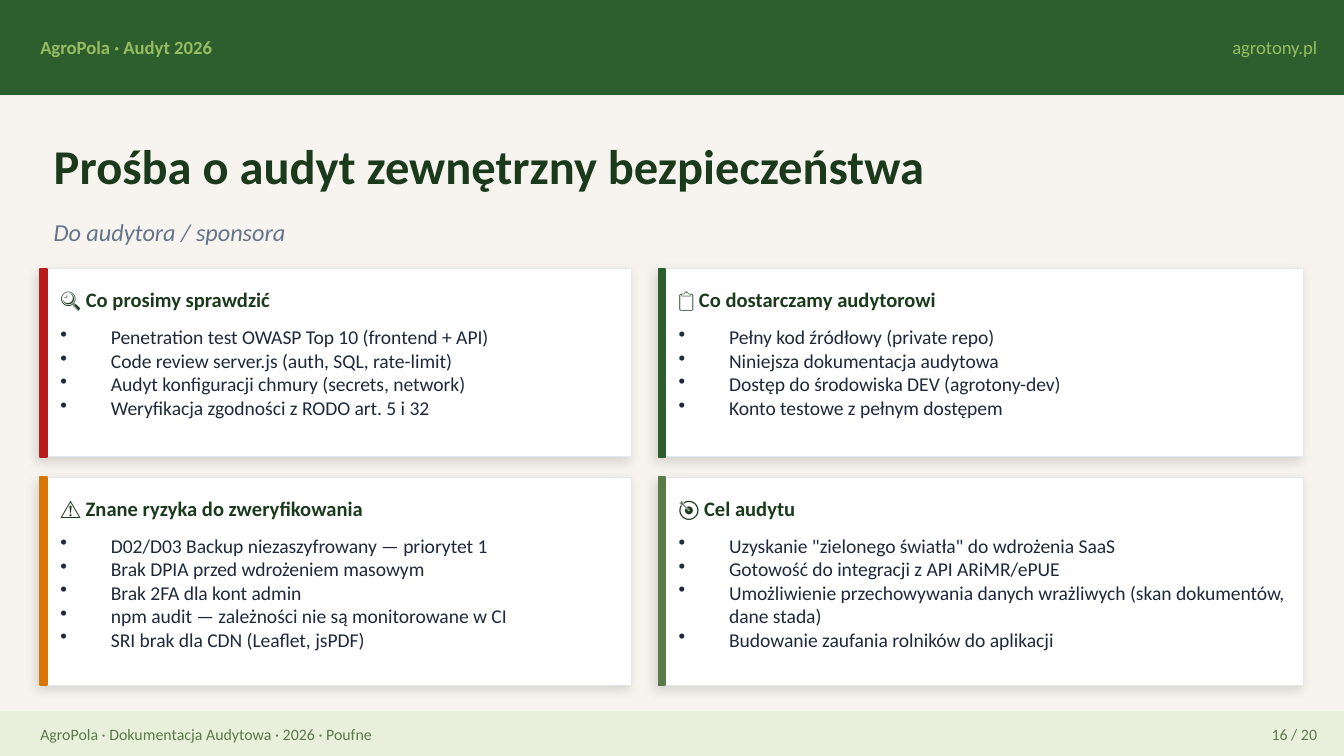
from lxml import etree
from pptx import Presentation
from pptx.dml.color import RGBColor
from pptx.enum.shapes import MSO_SHAPE
from pptx.enum.text import MSO_ANCHOR, PP_ALIGN
from pptx.oxml.ns import qn
from pptx.util import Inches, Pt

RECTANGLE = MSO_SHAPE.RECTANGLE
TOP, MIDDLE = MSO_ANCHOR.TOP, MSO_ANCHOR.MIDDLE
LEFT, RIGHT = PP_ALIGN.LEFT, PP_ALIGN.RIGHT

CREAM = RGBColor(0xF7, 0xF4, 0xEF)
FOREST = RGBColor(0x2C, 0x5F, 0x2D)
DARK_GREEN = RGBColor(0x1A, 0x3A, 0x1B)
LIME = RGBColor(0x97, 0xBC, 0x62)
PALE_GREEN = RGBColor(0xE8, 0xF0, 0xDC)
MOSS = RGBColor(0x5A, 0x7A, 0x4A)
SLATE = RGBColor(0x64, 0x74, 0x8B)
INK = RGBColor(0x1E, 0x29, 0x3B)
WHITE = RGBColor(0xFF, 0xFF, 0xFF)
BORDER = RGBColor(0xE2, 0xE8, 0xF0)
RED = RGBColor(0xB9, 0x1C, 0x1C)
AMBER = RGBColor(0xD9, 0x77, 0x06)

WIDTH = Inches(10)
HEIGHT = WIDTH * 9 // 16
UNIT = WIDTH / 100  # square grid: 100 columns, 56.25 rows


class AuditSlide:
    """Style and current slide; places are in grid columns and rows."""

    font_name = "Calibri"

    def __init__(self, slide):
        self.slide = slide
        slide.background.fill.solid()
        slide.background.fill.fore_color.rgb = CREAM

    def place(self, *cells):
        return [round(cell * UNIT) for cell in cells]

    def block(self, box, fill, line=None, line_width=1):
        shape = self.slide.shapes.add_shape(RECTANGLE, *self.place(*box))
        shape.shadow.inherit = False
        shape.fill.solid()
        shape.fill.fore_color.rgb = fill
        shape.line.color.rgb = line or fill
        shape.line.width = Pt(line_width)
        return shape

    def soft_shadow(self, shape):
        effects = shape._element.spPr.find(qn("a:effectLst"))
        shadow = etree.SubElement(
            effects, qn("a:outerShdw"), blurRad=str(Pt(6)), dist=str(Pt(3)),
            dir=str(135 * 60000), algn="bl", rotWithShape="0")
        color = etree.SubElement(shadow, qn("a:srgbClr"), val="000000")
        etree.SubElement(color, qn("a:alpha"), val="12000")

    def text(self, box, lines, size, color, bold=False, italic=False,
             align=LEFT, anchor=MIDDLE, bullets=False):
        frame = self.slide.shapes.add_textbox(*self.place(*box)).text_frame
        frame.word_wrap = True
        frame.vertical_anchor = anchor
        frame.margin_left = frame.margin_right = 0
        frame.margin_top = frame.margin_bottom = 0
        frame.text = "\n".join(lines)
        for paragraph in frame.paragraphs:
            paragraph.alignment = align
            if bullets:
                self.bullet(paragraph)
            font = paragraph.font
            font.name, font.size = self.font_name, Pt(size)
            font.bold, font.italic = bold, italic
            font.color.rgb = color

    def bullet(self, paragraph):
        properties = paragraph._p.get_or_add_pPr()
        indent = Pt(27)
        properties.set("marL", str(indent))
        properties.set("indent", str(-indent))
        etree.SubElement(properties, qn("a:buSzPct"), val="100000")
        etree.SubElement(properties, qn("a:buChar"), char="•")

    def card(self, box, accent, heading, points):
        left, top, width, height = box
        self.soft_shadow(self.block(box, WHITE, BORDER, 0.5))
        self.block((left, top, 0.5, height), accent)
        self.text((left + 1.5, top + 0.8, width - 2, 3), [heading],
                  11, DARK_GREEN, bold=True)
        self.text((left + 1.5, top + 4.2, width - 2.5, height - 5.2), points,
                  10.5, INK, anchor=TOP, bullets=True)


def main():
    deck = Presentation()
    deck.slide_width, deck.slide_height = WIDTH, HEIGHT
    page = AuditSlide(deck.slides.add_slide(deck.slide_layouts[6]))

    # Header band
    page.block((0, 0, 100, 7), FOREST)
    page.text((3, 0, 50, 7), ["AgroPola · Audyt 2026"], 10, LIME, bold=True)
    page.text((70, 0, 28, 7), ["agrotony.pl"], 10, LIME, align=RIGHT)

    # Title and subtitle
    page.text((4, 8.5, 92, 7.5), ["Prośba o audyt zewnętrzny bezpieczeństwa"],
              26, DARK_GREEN, bold=True)
    page.text((4, 15.5, 92, 3.5), ["Do audytora / sponsora"],
              13, SLATE, italic=True)

    # Footer band, down to the slide's bottom edge
    page.block((0, 53, 100, 3.25), PALE_GREEN)
    page.text((3, 53, 70, 3.25),
              ["AgroPola · Dokumentacja Audytowa · 2026 · Poufne"], 8.5, MOSS)
    page.text((85, 53, 13, 3.25), ["16 / 20"], 8.5, MOSS, align=RIGHT)

    # Cards, row by row
    columns = [(3, 44), (49, 48)]
    rows = [(20, 14), (35.5, 15.5)]
    cards = [
        (RED, "🔍 Co prosimy sprawdzić", [
            "Penetration test OWASP Top 10 (frontend + API)",
            "Code review server.js (auth, SQL, rate-limit)",
            "Audyt konfiguracji chmury (secrets, network)",
            "Weryfikacja zgodności z RODO art. 5 i 32"]),
        (FOREST, "📋 Co dostarczamy audytorowi", [
            "Pełny kod źródłowy (private repo)",
            "Niniejsza dokumentacja audytowa",
            "Dostęp do środowiska DEV (agrotony-dev)",
            "Konto testowe z pełnym dostępem"]),
        (AMBER, "⚠️ Znane ryzyka do zweryfikowania", [
            "D02/D03 Backup niezaszyfrowany — priorytet 1",
            "Brak DPIA przed wdrożeniem masowym",
            "Brak 2FA dla kont admin",
            "npm audit — zależności nie są monitorowane w CI",
            "SRI brak dla CDN (Leaflet, jsPDF)"]),
        (MOSS, "🎯 Cel audytu", [
            'Uzyskanie "zielonego światła" do wdrożenia SaaS',
            "Gotowość do integracji z API ARiMR/ePUE",
            "Umożliwienie przechowywania danych wrażliwych "
            "(skan dokumentów, dane stada)",
            "Budowanie zaufania rolników do aplikacji"]),
    ]
    for index, (accent, heading, points) in enumerate(cards):
        left, width = columns[index % 2]
        top, height = rows[index // 2]
        page.card((left, top, width, height), accent, heading, points)

    deck.save("out.pptx")


if __name__ == "__main__":
    main()
